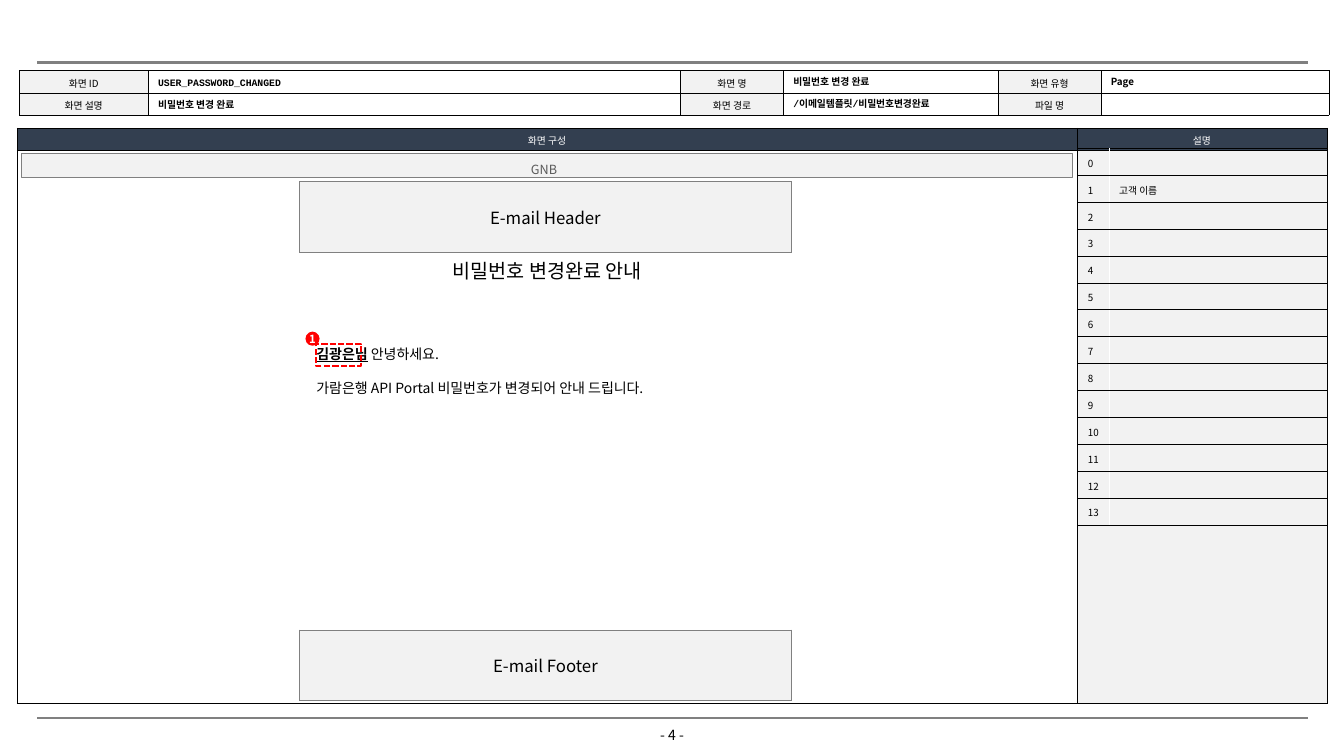
from lxml.etree import SubElement
from pptx import Presentation
from pptx.dml.color import RGBColor
from pptx.enum.dml import MSO_LINE
from pptx.enum.shapes import MSO_CONNECTOR, MSO_SHAPE
from pptx.enum.text import MSO_ANCHOR, PP_ALIGN
from pptx.oxml.ns import qn
from pptx.util import Inches, Pt

SANS = "Noto Sans CJK KR"
MONO = "Courier New"
BLACK = RGBColor(0x00, 0x00, 0x00)
WHITE = RGBColor(0xFF, 0xFF, 0xFF)
RED = RGBColor(0xFF, 0x00, 0x00)
NAVY = RGBColor(0x33, 0x3F, 0x50)
GRAY = RGBColor(0x80, 0x80, 0x80)
DARK_GRAY = RGBColor(0x59, 0x59, 0x59)
PALE = RGBColor(0xF2, 0xF2, 0xF2)

HAIRLINE = (BLACK, 0.25)
DIVIDER = (WHITE, 0.5)
RULE = (GRAY, 1.5)

INFO_LABELS = [
    ["화면 ID", "", "화면 명", "", "화면 유형", ""],
    ["화면 설명", "", "화면 경로", "", "파일 명", ""],
]
INFO_VALUES = [
    ("USER_PASSWORD_CHANGED", MONO, 1.47, 0.7, 5.24, 0.24),
    ("비밀번호 변경 완료", SANS, 1.47, 0.93, 5.25, 0.22),
    ("비밀번호 변경 완료", SANS, 7.77, 0.7, 2.13, 0.21),
    ("/이메일템플릿/비밀번호변경완료", MONO, 7.77, 0.91, 2.13, 0.23),
    ("Page", SANS, 10.92, 0.7, 2.26, 0.22),
]
NOTES = {1: "고객 이름"}
NOTE_COUNT = 14


def add_span(para, text, size, color=BLACK, font=SANS, bold=False, underline=False):
    span = para.add_run()
    span.text = text
    span.font.size = Pt(size)
    span.font.name = font
    span.font.bold = bold
    span.font.underline = underline
    span.font.color.rgb = color
    SubElement(span.font._element, qn("a:ea")).set("typeface", font)


def set_margins(target, horizontal, top, bottom):
    """Set the inner margins of a text frame or a table cell."""
    target.margin_left = target.margin_right = Inches(horizontal)
    target.margin_top, target.margin_bottom = Inches(top), Inches(bottom)


def set_borders(cell, left, right, top, bottom):
    """Draw each side as (color, points); None leaves the side open."""
    properties = cell._tc.get_or_add_tcPr()
    for tag, border in zip(("lnL", "lnR", "lnT", "lnB"), (left, right, top, bottom)):
        line = SubElement(properties, qn("a:" + tag))
        if border is None:
            SubElement(line, qn("a:noFill"))
            continue
        color, points = border
        line.set("w", str(Pt(points)))
        fill = SubElement(line, qn("a:solidFill"))
        SubElement(fill, qn("a:srgbClr")).set("val", str(color))


def add_grid(page, left, top, widths, heights):
    frame = page.shapes.add_table(len(heights), len(widths), Inches(left), Inches(top),
                                  Inches(sum(widths)), Inches(sum(heights)))
    table = frame.table
    table.first_row = table.horz_banding = False
    for column, width in zip(table.columns, widths):
        column.width = Inches(width)
    for row, height in zip(table.rows, heights):
        row.height = Inches(height)
    return table


def fill_cell(cell, text, size, borders, fill=None, color=BLACK,
              align=PP_ALIGN.CENTER, margins=(0.12, 0.04, 0.02)):
    set_borders(cell, *borders)
    if fill is None:
        cell.fill.background()
    else:
        cell.fill.solid()
        cell.fill.fore_color.rgb = fill
    set_margins(cell, *margins)
    cell.vertical_anchor = MSO_ANCHOR.MIDDLE
    para = cell.text_frame.paragraphs[0]
    para.alignment = align
    if text:
        add_span(para, text, size, color)
    else:
        SubElement(para._p, qn("a:endParaRPr")).set("sz", str(size * 100))


def add_top_rule(page):
    rule = page.shapes.add_connector(MSO_CONNECTOR.STRAIGHT, Inches(0.37), Inches(0.62),
                                     Inches(12.97), Inches(0.62))
    rule.line.color.rgb = GRAY
    rule.line.width = Pt(1.5)
    SubElement(rule._element.spPr, qn("a:effectLst"))


def add_footer_table(page):
    table = add_grid(page, 0.37, 7.12, [6.3, 6.3], [0.21])
    for cell in table.iter_cells():
        fill_cell(cell, "", 7, [None, None, RULE, None])


def add_box(page, left, top, width, height, wrap=True):
    box = page.shapes.add_textbox(Inches(left), Inches(top), Inches(width), Inches(height))
    box.text_frame.word_wrap = wrap
    return box.text_frame


def add_figure(page, kind, left, top, width, height, fill=None, line=None, points=0.75):
    figure = page.shapes.add_shape(kind, Inches(left), Inches(top),
                                   Inches(width), Inches(height))
    figure.shadow.inherit = False
    if fill is None:
        figure.fill.background()
    else:
        figure.fill.solid()
        figure.fill.fore_color.rgb = fill
    if line is None:
        figure.line.fill.background()
    else:
        figure.line.color.rgb = line
        figure.line.width = Pt(points)
    figure.text_frame.vertical_anchor = MSO_ANCHOR.MIDDLE
    return figure


def add_layout_table(page):
    table = add_grid(page, 0.17, 1.27, [10.51, 2.48], [0.22, 5.49])
    borders = [HAIRLINE] * 4
    for column, title in enumerate(("화면 구성", "설명")):
        fill_cell(table.cell(0, column), title, 7, borders, NAVY, WHITE)
    fill_cell(table.cell(1, 0), "", 7, borders)
    fill_cell(table.cell(1, 1), "", 7, borders, PALE)


def add_screen_info(page):
    table = add_grid(page, 0.19, 0.7, [1.28, 5.28, 1.02, 2.13, 1.02, 2.26], [0.22, 0.22])
    for row, labels in enumerate(INFO_LABELS):
        for column, label in enumerate(labels):
            fill_cell(table.cell(row, column), label, 7, [HAIRLINE] * 4,
                      PALE if label else None, margins=(0.12, 0.05, 0.02))
    for text, font, *place in INFO_VALUES:
        frame = add_box(page, *place)
        set_margins(frame, 0.1, 0, 0)
        frame.vertical_anchor = MSO_ANCHOR.MIDDLE
        frame.paragraphs[0].alignment = PP_ALIGN.JUSTIFY
        add_span(frame.paragraphs[0], text, 7, font=font, bold=True)


def add_notes_table(page):
    table = add_grid(page, 10.69, 1.47, [0.31, 2.16], [3.74 / NOTE_COUNT] * NOTE_COUNT)
    for row in range(NOTE_COUNT):
        number, note = table.cell(row, 0), table.cell(row, 1)
        fill_cell(number, str(row), 7, [None, DIVIDER, HAIRLINE, HAIRLINE],
                  align=PP_ALIGN.LEFT, margins=(0.1, 0.05, 0.05))
        number.margin_right = Inches(0.02)
        fill_cell(note, NOTES.get(row, ""), 7, [DIVIDER, None, HAIRLINE, HAIRLINE],
                  align=PP_ALIGN.LEFT, margins=(0.1, 0.05, 0.05))
        for cell in (number, note):
            cell.text_frame.paragraphs[0].line_spacing = Pt(12)


def add_mail_band(page, top, text):
    table = add_grid(page, 2.97, top, [4.88], [0.7])
    fill_cell(table.cell(0, 0), text, 12, [(GRAY, 0.5)] * 4, PALE,
              margins=(0.09, 0.07, 0.07))


def add_navigation_bar(page):
    bar = add_figure(page, MSO_SHAPE.RECTANGLE, 0.21, 1.52, 10.43, 0.24, PALE, GRAY)
    bar.text_frame.margin_left = Inches(0.04)
    para = bar.text_frame.paragraphs[0]
    para.alignment = PP_ALIGN.CENTER
    para.line_spacing = 1.5
    add_span(para, "GNB", 9, DARK_GRAY)


def add_mail_body(page):
    title = add_box(page, 4.28, 2.52, 2.3, 0.34, wrap=False).paragraphs[0]
    title.alignment = PP_ALIGN.CENTER
    add_span(title, "비밀번호 변경완료 안내", 14)

    body = add_box(page, 3.04, 3.38, 5.2, 0.61)
    greeting = body.paragraphs[0]
    add_span(greeting, "김광은님", 10, bold=True, underline=True)
    add_span(greeting, " 안녕하세요.", 10)
    message = body.add_paragraph()
    message.space_before = Pt(12.5)
    add_span(message, "가람은행 API Portal 비밀번호가 변경되어 안내 드립니다.", 10)


def add_name_marker(page):
    outline = add_figure(page, MSO_SHAPE.RECTANGLE, 3.13, 3.41, 0.45, 0.22,
                         line=RED, points=1.5)
    outline.line.dash_style = MSO_LINE.SQUARE_DOT
    badge = add_figure(page, MSO_SHAPE.OVAL, 3.03, 3.29, 0.14, 0.14, RED)
    set_margins(badge.text_frame, 0, 0, 0)
    badge.text_frame.word_wrap = False
    para = badge.text_frame.paragraphs[0]
    para.alignment = PP_ALIGN.CENTER
    add_span(para, "1", 8, WHITE, bold=True)


def add_page_number(page):
    frame = add_box(page, 6.12, 7.21, 1.09, 0.17)
    set_margins(frame, 0, 0, 0)
    frame.paragraphs[0].alignment = PP_ALIGN.CENTER
    add_span(frame.paragraphs[0], "- 4 -", 10)


def main():
    deck = Presentation()
    deck.slide_width, deck.slide_height = Inches(13.33), Inches(7.5)
    page = deck.slides.add_slide(deck.slide_layouts[6])
    add_top_rule(page)
    add_footer_table(page)
    add_page_number(page)
    add_layout_table(page)
    add_screen_info(page)
    add_notes_table(page)
    add_navigation_bar(page)
    add_mail_body(page)
    add_mail_band(page, 1.8, "E-mail Header")
    add_mail_band(page, 6.25, "E-mail Footer")
    add_name_marker(page)
    deck.save("out.pptx")


if __name__ == "__main__":
    main()
